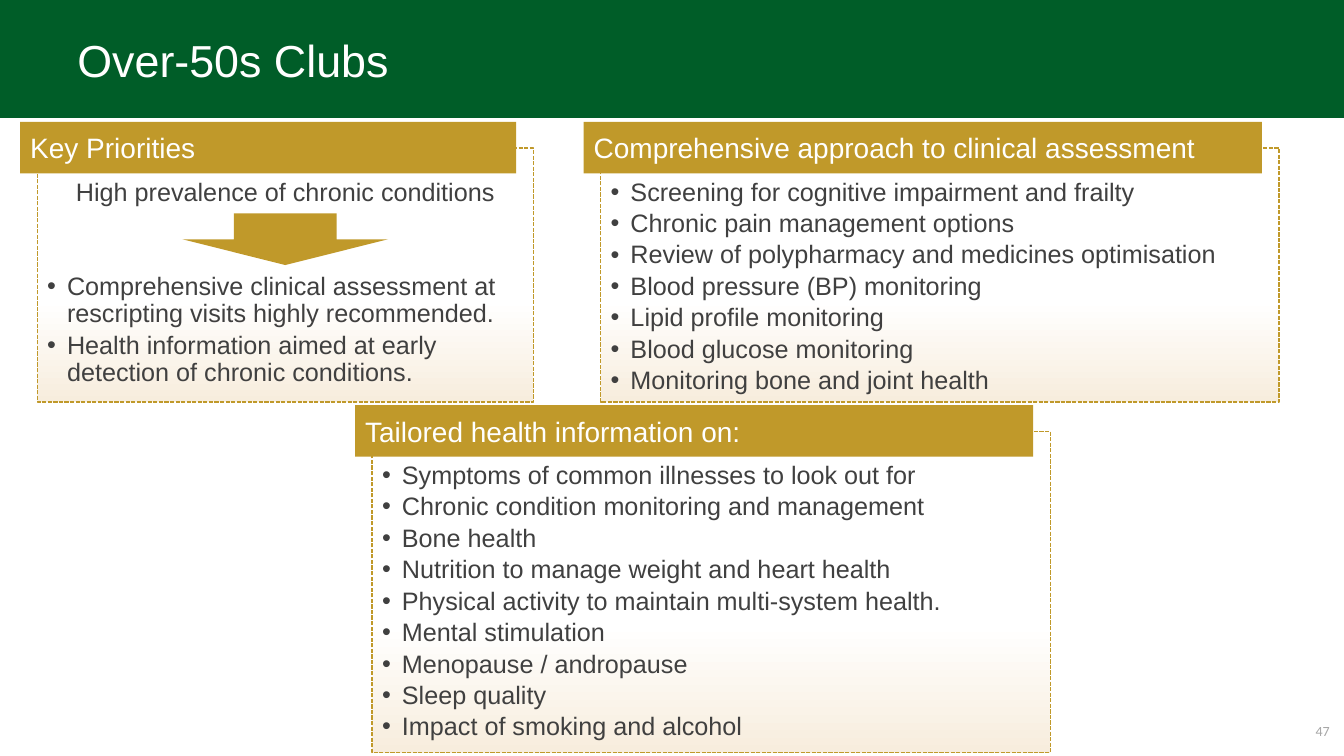
from pptx import Presentation
from pptx.dml.color import RGBColor
from pptx.enum.dml import MSO_LINE
from pptx.enum.shapes import MSO_SHAPE
from pptx.enum.text import MSO_ANCHOR, PP_ALIGN
from pptx.oxml.ns import qn
from pptx.util import Cm, Pt
from lxml import etree

RECT, DOWN_ARROW = MSO_SHAPE.RECTANGLE, MSO_SHAPE.DOWN_ARROW
TOP, MIDDLE = MSO_ANCHOR.TOP, MSO_ANCHOR.MIDDLE
LEFT, CENTER, RIGHT = PP_ALIGN.LEFT, PP_ALIGN.CENTER, PP_ALIGN.RIGHT
SHORT_DASH = MSO_LINE.SQUARE_DOT

COLOURS = {
    "green": "005D28", "gold": "C0992A", "cream": "F7EDDD",
    "white": "FFFFFF", "text": "404040", "number": "A6A6A6",
}
TAB_HEIGHT = 1.3
TAB_SHIFT = (0.43, 0.66)

ASSESSMENT = [
    "Screening for cognitive impairment and frailty",
    "Chronic pain management options",
    "Review of polypharmacy and medicines optimisation",
    "Blood pressure (BP) monitoring",
    "Lipid profile monitoring",
    "Blood glucose monitoring",
    "Monitoring bone and joint health",
]
INFORMATION = [
    "Symptoms of common illnesses to look out for",
    "Chronic condition monitoring and management",
    "Bone health",
    "Nutrition to manage weight and heart health",
    "Physical activity to maintain multi-system health.",
    "Mental stimulation",
    "Menopause / andropause",
    "Sleep quality",
    "Impact of smoking and alcohol",
]
PRIORITIES = [
    "Comprehensive clinical assessment at rescripting visits highly recommended.",
    "Health information aimed at early detection of chronic conditions.",
]


def rgb(name):
    return RGBColor.from_string(COLOURS[name])


def set_format(target, values):
    for name, value in values.items():
        setattr(target, name, value)


class ClubSlide:
    def __init__(self, s):
        self.s = s

    def block(self, kind, box, colour):
        sp = self.s.shapes.add_shape(kind, *map(Cm, box))
        sp.shadow.inherit = False
        sp.fill.solid()
        sp.fill.fore_color.rgb = rgb(colour)
        sp.line.fill.background()
        return sp

    def frame(self, sp, anchor, top=0.13):
        tf = sp.text_frame
        set_format(tf, {
            "word_wrap": True, "vertical_anchor": anchor,
            "margin_left": Cm(0.25), "margin_right": Cm(0.25),
            "margin_top": Cm(top), "margin_bottom": Cm(0.13),
        })
        return tf

    def add_text(self, p, text, size, colour, align=LEFT, font="Arial"):
        p.alignment = align
        r = p.add_run()
        r.text = text
        set_format(r.font, {"size": Pt(size), "name": font})
        r.font.color.rgb = rgb(colour)

    def label(self, box, text, size, colour, **style):
        sp = self.s.shapes.add_textbox(*map(Cm, box))
        tf = self.frame(sp, MIDDLE)
        self.add_text(tf.paragraphs[0], text, size, colour, **style)

    def bullet(self, p):
        pPr = p._p.get_or_add_pPr()
        pPr.set("marL", str(Cm(0.5)))
        pPr.set("indent", str(-Cm(0.5)))
        etree.SubElement(pPr, qn("a:buFont")).set("typeface", "Arial")
        etree.SubElement(pPr, qn("a:buChar")).set("char", "•")

    def panel(self, box, heading, bullets, lead=None, gap=3):
        left, top, width, height = box
        sp = self.block(RECT, box, "white")
        sp.fill.gradient()
        sp.fill.gradient_angle = 90
        stops = (("cream", 0), ("white", 0.4))
        for stop, (colour, position) in zip(sp.fill.gradient_stops, stops):
            stop.color.rgb = rgb(colour)
            stop.position = position
        sp.line.color.rgb = rgb("gold")
        set_format(sp.line, {"width": Pt(1), "dash_style": SHORT_DASH})

        tf = self.frame(sp, TOP, 0.79)
        lines = ([lead] if lead else []) + bullets
        for i, text in enumerate(lines):
            p = tf.add_paragraph() if i else tf.paragraphs[0]
            if text != lead:
                self.bullet(p)
            p.line_spacing = 0.9
            if i:
                p.space_before = Pt(gap if i == 1 else 3)
            self.add_text(p, text, 18, "text", CENTER if text == lead else LEFT)

        dx, dy = TAB_SHIFT
        tab = self.block(RECT, (left - dx, top - dy, width, TAB_HEIGHT), "gold")
        tf = self.frame(tab, MIDDLE)
        self.add_text(tf.paragraphs[0], heading, 20, "white")


def main():
    prs = Presentation()
    prs.slide_width, prs.slide_height = Cm(33.87), Cm(19.05)
    club = ClubSlide(prs.slides.add_slide(prs.slide_layouts[6]))

    club.block(RECT, (0, 0, 33.87, 2.97), "green")
    club.label((1.7, 0.58, 30.48, 1.83), "Over-50s Clubs", 32, "white")
    club.label((25.86, 17.91, 7.9, 1.02), "47", 10, "number",
               align=RIGHT, font="Calibri")

    club.panel((0.94, 3.73, 12.5, 6.4), "Key Priorities", PRIORITIES,
               lead="High prevalence of chronic conditions", gap=48)
    club.block(DOWN_ARROW, (4.6, 5.38, 5.18, 1.3), "gold")
    club.panel((15.14, 3.73, 17.09, 6.4),
               "Comprehensive approach to clinical assessment", ASSESSMENT)
    club.panel((9.38, 10.87, 17.09, 8.1),
               "Tailored health information on:", INFORMATION)

    prs.save("out.pptx")


if __name__ == "__main__":
    main()
